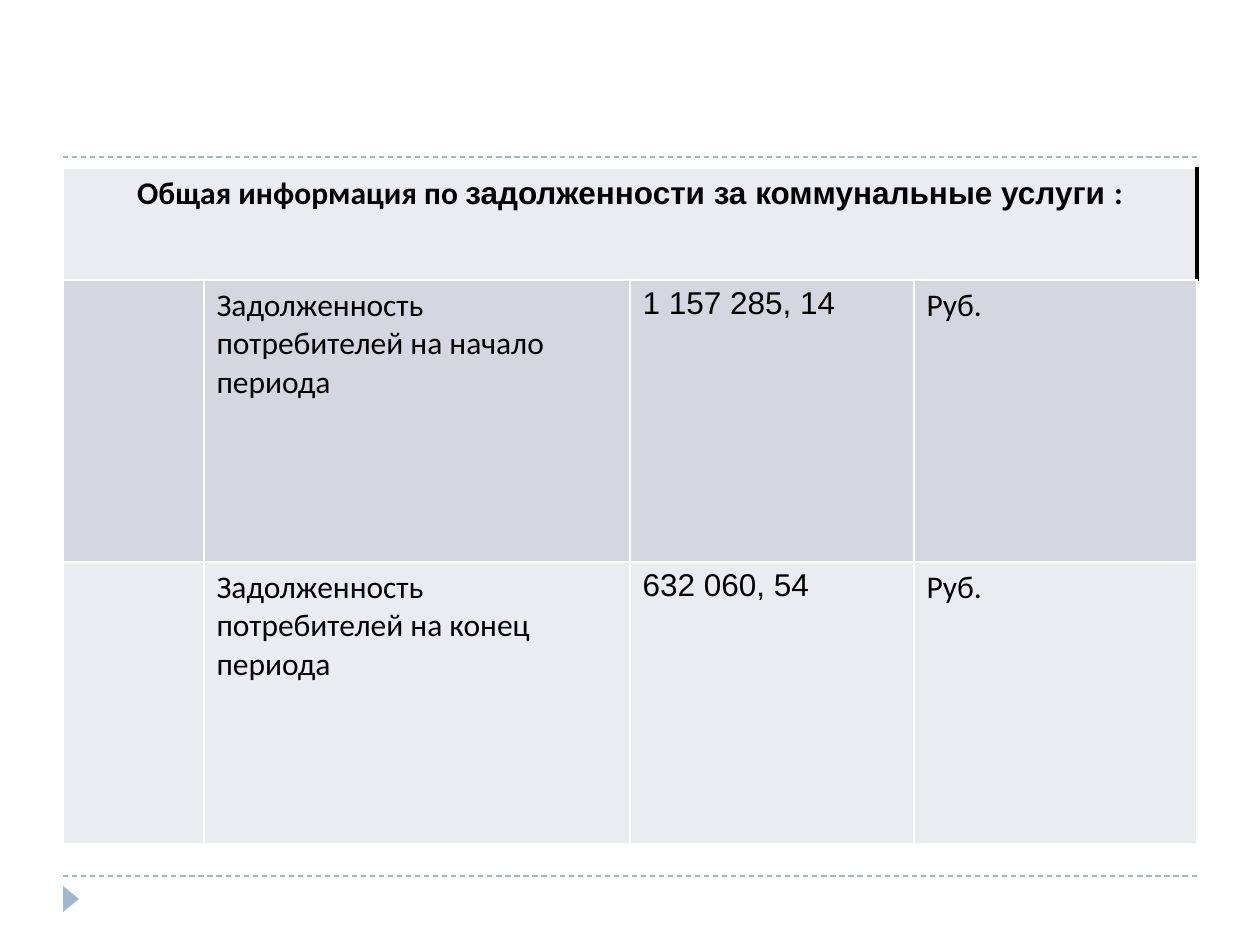
from lxml.etree import SubElement
from pptx import Presentation
from pptx.dml.color import RGBColor
from pptx.enum.dml import MSO_LINE
from pptx.enum.shapes import MSO_CONNECTOR, MSO_SHAPE
from pptx.enum.text import PP_ALIGN
from pptx.oxml.ns import qn
from pptx.util import Pt

COLORS = {
    "accent": "9FB8CD",
    "light": "EBECF0",
    "dark": "D5D7E0",
    "border": "FFFFFF",
    "text": "000000",
}
HEADING = [
    (" Общая информация по ", "Calibri"),
    ("задолженности за коммунальные услуги ", "Arial"),
    (": ", "Calibri"),
]
DEBTS = [
    ("Задолженность потребителей на начало периода", "1 157 285, 14", "Руб."),
    ("Задолженность потребителей на конец периода", "632 060, 54", "Руб."),
]
DEBT_FONTS = ["Calibri", "Arial", "Calibri"]
COLUMN_WIDTHS = [141, 426, 284, 283]
ROW_HEIGHTS = [112, 282, 282]
ROW_FILLS = ["light", "dark", "light"]
LEFT, TABLE_TOP = 63, 168
WIDTH = sum(COLUMN_WIDTHS)
RULE_TOPS = [157, 876]
MARKER = (58, 891, 26, 16)


def px(length):
    return round(length * 914400 / 126)


def color(name):
    return RGBColor.from_string(COLORS[name])


def add_rule(slide, top):
    rule = slide.shapes.add_connector(
        MSO_CONNECTOR.STRAIGHT, px(LEFT), px(top), px(LEFT + WIDTH), px(top)
    )
    rule.line.color.rgb = color("accent")
    rule.line.width = Pt(0.75)
    rule.line.dash_style = MSO_LINE.DASH
    SubElement(rule._element.spPr, qn("a:effectLst"))


def add_marker(slide):
    marker = slide.shapes.add_shape(MSO_SHAPE.ISOSCELES_TRIANGLE, *map(px, MARKER))
    marker.rotation = 90
    marker.shadow.inherit = False
    marker.fill.solid()
    marker.fill.fore_color.rgb = color("accent")
    marker.line.fill.background()


def style_cell(cell, fill, right=("border", 1)):
    properties = cell._tc.get_or_add_tcPr()
    borders = {"L": ("border", 1), "R": right, "T": ("border", 1), "B": ("border", 1)}
    for side, (name, width) in borders.items():
        line = SubElement(properties, qn(f"a:ln{side}"), w=str(Pt(width)))
        solid = SubElement(line, qn("a:solidFill"))
        SubElement(solid, qn("a:srgbClr"), val=COLORS[name])
    cell.fill.solid()
    cell.fill.fore_color.rgb = color(fill)


def write_runs(cell, runs, bold=False, alignment=PP_ALIGN.LEFT):
    paragraph = cell.text_frame.paragraphs[0]
    paragraph.alignment = alignment
    for text, font_name in runs:
        run = paragraph.add_run()
        run.text = text
        run.font.name = font_name
        run.font.size = Pt(18)
        run.font.bold = bold
        run.font.color.rgb = color("text")


def add_debt_table(slide):
    table = slide.shapes.add_table(
        len(ROW_HEIGHTS), len(COLUMN_WIDTHS),
        px(LEFT), px(TABLE_TOP), px(WIDTH), px(sum(ROW_HEIGHTS)),
    ).table
    for column, width in zip(table.columns, COLUMN_WIDTHS):
        column.width = px(width)
    for index, (row, height, fill) in enumerate(zip(table.rows, ROW_HEIGHTS, ROW_FILLS)):
        row.height = px(height)
        for cell in row.cells:
            style_cell(cell, fill, ("border", 1) if index else ("text", 2.25))
    heading = table.cell(0, 0)
    heading.merge(table.cell(0, len(COLUMN_WIDTHS) - 1))
    write_runs(heading, HEADING, True, PP_ALIGN.CENTER)
    for row_index, debt in enumerate(DEBTS, 1):
        for column_index, run in enumerate(zip(debt, DEBT_FONTS), 1):
            write_runs(table.cell(row_index, column_index), [run])


def main():
    presentation = Presentation()
    presentation.slide_width = px(1260)
    presentation.slide_height = px(945)
    slide = presentation.slides.add_slide(presentation.slide_layouts[6])
    for top in RULE_TOPS:
        add_rule(slide, top)
    add_marker(slide)
    add_debt_table(slide)
    presentation.save("out.pptx")


if __name__ == "__main__":
    main()
